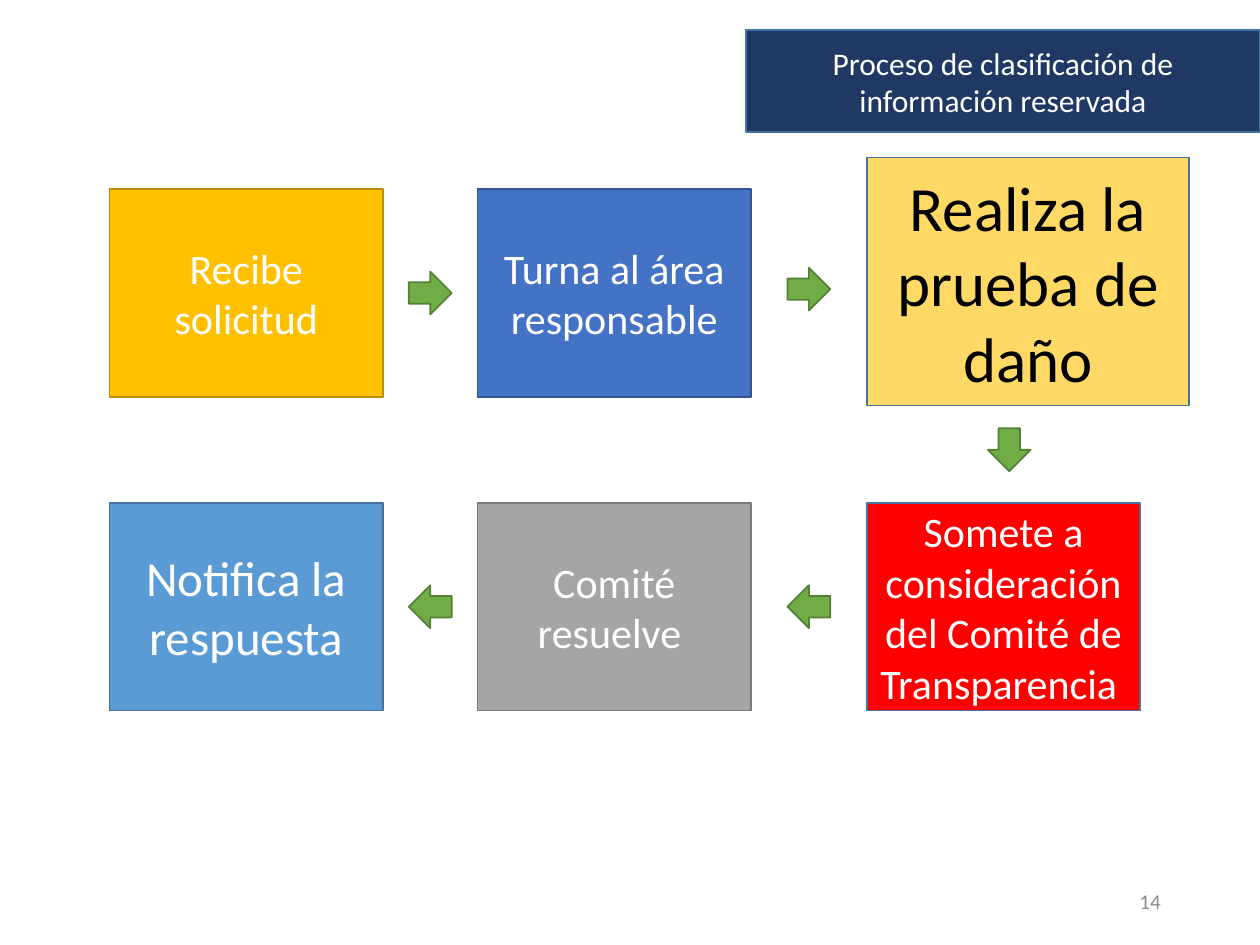
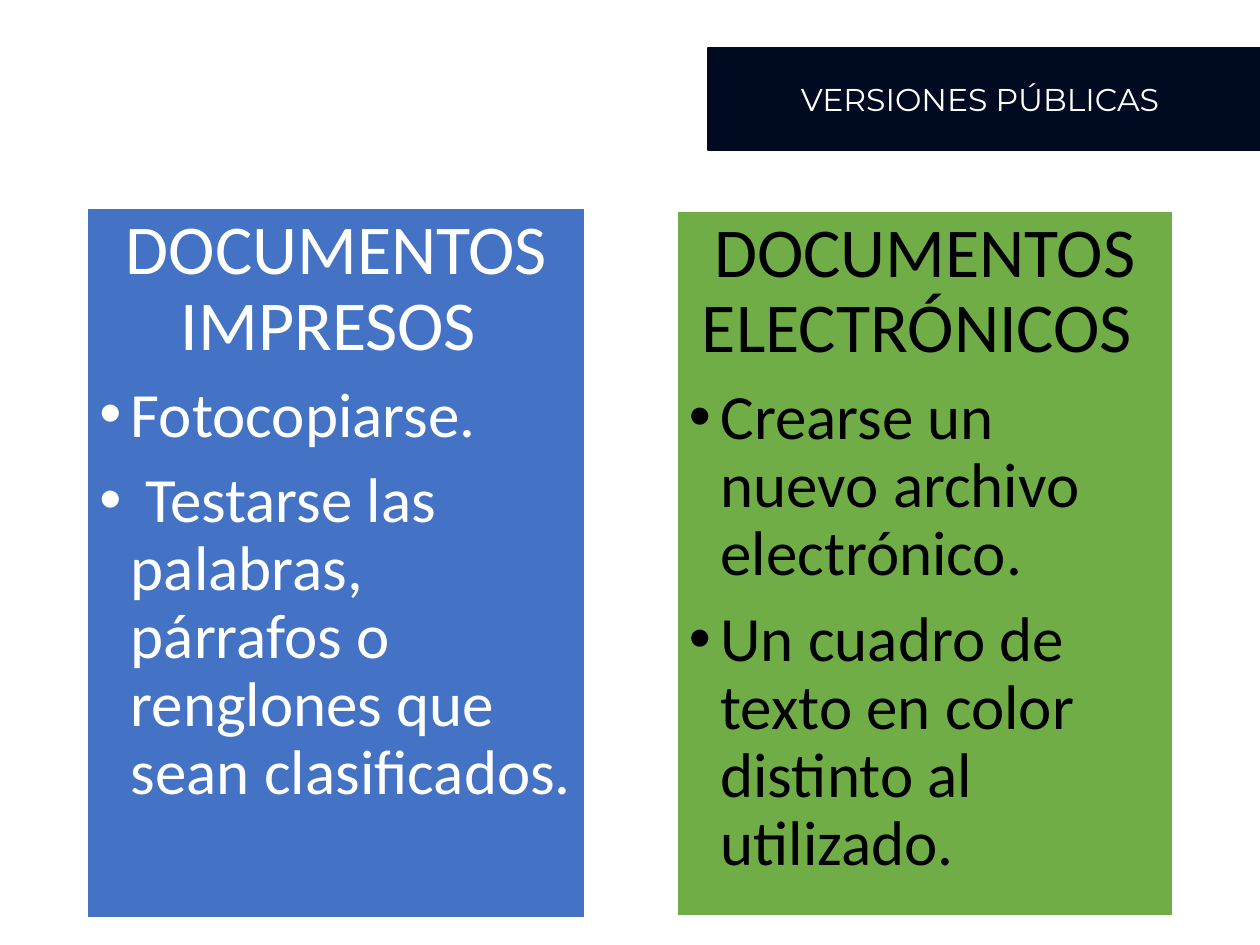
from pptx import Presentation
from pptx.dml.color import RGBColor
from pptx.enum.shapes import MSO_SHAPE
from pptx.enum.text import MSO_ANCHOR, PP_ALIGN
from pptx.oxml.ns import qn
from pptx.util import Inches, Pt
from lxml import etree

COLORS = {
    "white": "FFFFFF", "black": "000000", "grey_text": "8C8C8C",
    "amber": "FFC000", "amber_line": "BD8E00",
    "blue": "4472C4", "blue_line": "325491",
    "yellow": "FFD966", "red": "FF0000",
    "grey": "A5A5A5", "grey_line": "7A7A7A",
    "sky": "5B9BD5", "steel_line": "43739E",
    "green": "70AD47", "green_line": "538035",
    "navy": "203864", "midnight": "000B22",
}
BODY_FONT = "Calibri"
BAND_H = 0.81


def rgb(name):
    return RGBColor.from_string(COLORS[name])


def add_text(p, text, size=24, color="white", font=BODY_FONT,
             align=PP_ALIGN.CENTER, bullet=False, spacing=None, before=0):
    if bullet:
        pPr = p._p.get_or_add_pPr()
        pPr.set("marL", str(Inches(0.25)))
        pPr.set("indent", str(-Inches(0.25)))
        etree.SubElement(pPr, qn("a:buFont")).set("typeface", "Arial")
        etree.SubElement(pPr, qn("a:buChar")).set("char", "•")
    p.alignment = align
    p.space_before = Pt(before)
    if spacing:
        p.line_spacing = spacing
    r = p.add_run()
    r.text = text
    r.font.size = Pt(size)
    r.font.name = font
    r.font.color.rgb = rgb(color)


def add_block(s, box, fill, line, kind=MSO_SHAPE.RECTANGLE, width=1,
              anchor=MSO_ANCHOR.MIDDLE):
    sp = s.shapes.add_shape(kind, *[Inches(v) for v in box])
    sp.shadow.inherit = False
    sp.fill.solid()
    sp.fill.fore_color.rgb = rgb(fill)
    sp.line.color.rgb = rgb(line)
    sp.line.width = Pt(width)
    sp.text_frame.word_wrap = True
    sp.text_frame.vertical_anchor = anchor
    return sp


def add_label(s, box, text, fill, line, **fmt):
    sp = add_block(s, box, fill, line)
    add_text(sp.text_frame.paragraphs[0], text, **fmt)


def add_title_band(s, left, top, text, fill, line, font=BODY_FONT):
    # The band always runs to the right edge of the slide
    add_label(s, (left, top, 10 - left, BAND_H), text, fill, line,
              size=18, font=font)


def add_page_number(s, number):
    box = s.shapes.add_textbox(Inches(7.06), Inches(6.95),
                               Inches(2.25), Inches(0.4))
    tf = box.text_frame
    tf.word_wrap = True
    tf.vertical_anchor = MSO_ANCHOR.MIDDLE
    add_text(tf.paragraphs[0], str(number), size=12, color="grey_text",
             align=PP_ALIGN.RIGHT)


def add_arrow(s, cx, cy, rotation=0, side=0.34):
    sp = add_block(s, (cx - side / 2, cy - side / 2, side, side),
                   "green", "green_line", MSO_SHAPE.RIGHT_ARROW)
    sp.rotation = rotation


def add_flow(s, left, top):
    step_w, step_h = 2.17, 1.65
    cols = [left, left + 2.92, left + 6.01]
    rows = [top, top + 2.49]

    # Steps: column, row, text, fill, line, size
    steps = [
        (0, 0, "Recibe solicitud", "amber", "amber_line", 24),
        (1, 0, "Turna al área responsable", "blue", "blue_line", 24),
        (2, 1, "Somete a consideración del Comité de Transparencia ",
         "red", "steel_line", 24),
        (1, 1, "Comité resuelve ", "grey", "grey_line", 24),
        (0, 1, "Notifica la respuesta", "sky", "steel_line", 28),
    ]
    for col, row, text, fill, line, size in steps:
        add_label(s, (cols[col], rows[row], step_w, step_h), text,
                  fill, line, size=size)

    # Highlighted step, larger than the others
    add_label(s, (cols[2], top - 0.25, 2.56, 1.97),
              "Realiza la prueba de daño", "yellow", "steel_line",
              size=36, color="black")

    # Arrows centred in the gaps: right on the first row, left on the second
    gaps = [(cols[i] + step_w + cols[i + 1]) / 2 for i in (0, 1)]
    mid_rows = [y + step_h / 2 for y in rows]
    add_arrow(s, gaps[0], mid_rows[0])
    add_arrow(s, gaps[1], mid_rows[0] - 0.03)
    for cx in gaps:
        add_arrow(s, cx, mid_rows[1], 180)
    add_arrow(s, cols[2] + 1.13, top + 2.07, 90)


def add_panel(s, box, heading, bullets, fill, color):
    sp = add_block(s, box, fill, "white", width=1.5, anchor=MSO_ANCHOR.TOP)
    tf = sp.text_frame
    add_text(tf.paragraphs[0], heading, size=40, color=color, spacing=0.9)
    for text in bullets:
        add_text(tf.add_paragraph(), text, size=36, color=color,
                 align=PP_ALIGN.LEFT, bullet=True, spacing=0.9, before=10)


def build_process_slide(s):
    add_flow(s, 0.87, 1.5)
    add_title_band(s, 5.92, 0.24,
                   "Proceso de clasificación de información reservada",
                   "navy", "steel_line")
    add_page_number(s, 14)


def build_versions_slide(s):
    add_title_band(s, 5.62, 0.38, "VERSIONES PÚBLICAS ",
                   "midnight", "midnight", font="Montserrat")
    add_panel(s, (0.69, 1.65, 3.96, 5.64), "DOCUMENTOS IMPRESOS ",
              ["Fotocopiarse.",
               " Testarse las palabras, párrafos o renglones que sean "
               "clasificados."], "blue", "white")
    add_panel(s, (5.37, 1.67, 3.94, 5.6), "DOCUMENTOS ELECTRÓNICOS ",
              ["Crearse un nuevo archivo electrónico.",
               "Un cuadro de texto en color distinto al utilizado."],
              "green", "black")


def main():
    prs = Presentation()
    prs.slide_width, prs.slide_height = Inches(10), Inches(7.5)
    for build in (build_process_slide, build_versions_slide):
        build(prs.slides.add_slide(prs.slide_layouts[6]))
    prs.save("out.pptx")


if __name__ == "__main__":
    main()
